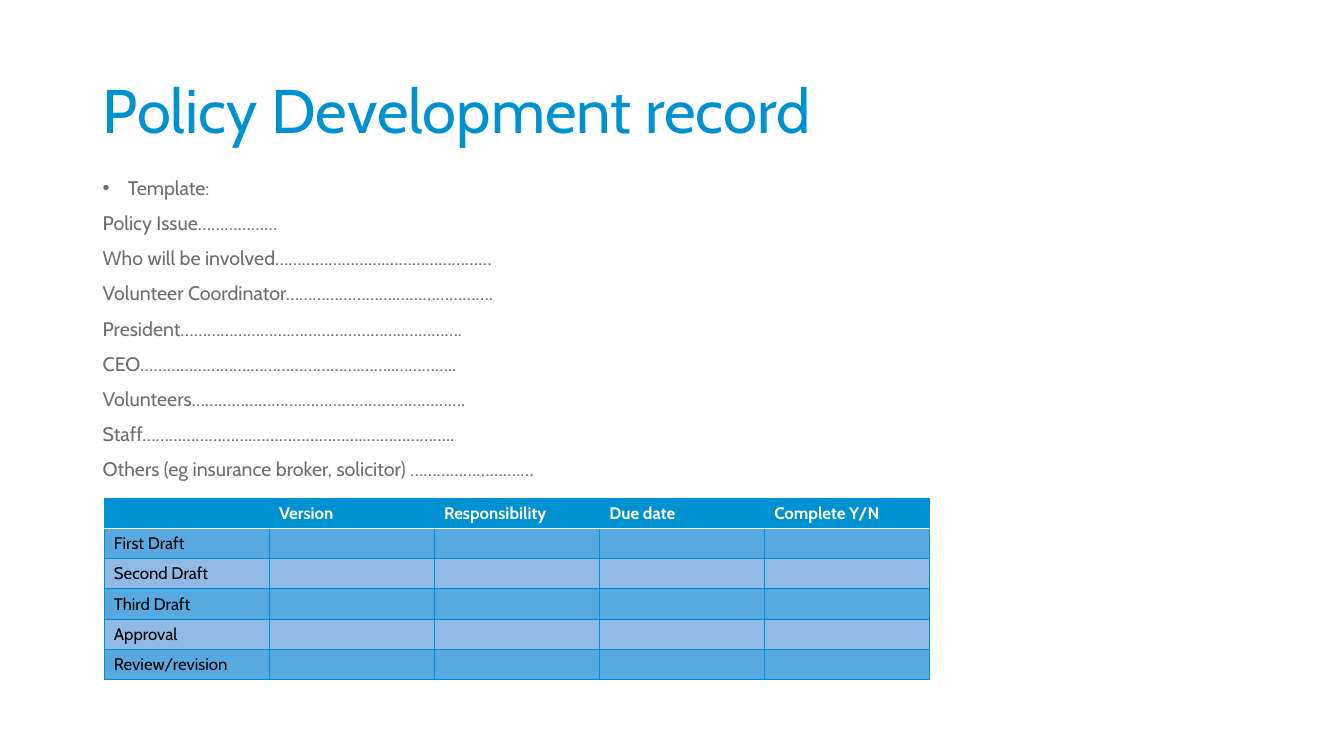
from lxml import etree
from pptx import Presentation
from pptx import util as u
from pptx.dml.color import RGBColor
from pptx.enum import text
from pptx.oxml.ns import qn

FONT = "Cabin"
BLUE, GREY, WHITE, BLACK = "0091D2", "6E6E6E", "FFFFFF", "000000"
BANDS = ["57A9DF", "90BAE6"]

FORM_LINES = [
    "Template:",
    "Policy Issue………………",
    "Who will be involved…………………….……………………",
    "Volunteer Coordinator…………………….………………….",
    "President…………………….……………………..………….",
    "CEO…………………….…………………….……..…………..",
    "Volunteers…………………….……………………………….",
    "Staff…………………….……………………..………………..",
    "Others (eg insurance broker, solicitor) …………………….…",
]
HEADINGS = ["", "Version", "Responsibility", "Due date", "Complete Y/N"]
STAGES = ["First Draft", "Second Draft", "Third Draft", "Approval", "Review/revision"]


def color(hex_value):
    return RGBColor.from_string(hex_value)


def set_font(paragraph, size, hex_value, bold=False):
    font = paragraph.font
    font.name, font.size, font.bold = FONT, u.Pt(size), bold
    font.color.rgb = color(hex_value)


def add_bullet(paragraph):
    properties = paragraph._p.get_or_add_pPr()
    properties.set("marL", str(u.Inches(0.25)))
    properties.set("indent", str(u.Inches(-0.25)))
    etree.SubElement(properties, qn("a:buFont")).set("typeface", "Arial")
    etree.SubElement(properties, qn("a:buChar")).set("char", "•")


def add_text(slide, lines, top, height, size, hex_value, anchor, bullets=0):
    """Add one paragraph per line; the first `bullets` of them are bulleted."""
    box = slide.shapes.add_textbox(
        u.Inches(0.92), u.Inches(top), u.Inches(11.5), u.Inches(height))
    frame = box.text_frame
    frame.word_wrap = True
    frame.vertical_anchor = anchor
    for index, line in enumerate(lines):
        paragraph = frame.add_paragraph() if index else frame.paragraphs[0]
        paragraph.text = line
        paragraph.line_spacing = 0.9
        if index:
            paragraph.space_before = u.Pt(10)
        if index < bullets:
            add_bullet(paragraph)
        set_font(paragraph, size, hex_value)


def add_border(cell, side, hex_value, width):
    line = etree.SubElement(cell._tc.get_or_add_tcPr(), qn(f"a:ln{side}"))
    line.set("w", str(u.Pt(width)))
    fill = etree.SubElement(line, qn("a:solidFill"))
    etree.SubElement(fill, qn("a:srgbClr")).set("val", hex_value)


def fill_cell(cell, label, row):
    is_header = row == 0
    below_header = {"B": 0, "T": 1}
    for side in "LRTB":
        if below_header.get(side) == row:
            add_border(cell, side, WHITE, 1)
        else:
            add_border(cell, side, BLUE, 0.5)
    cell.fill.solid()
    cell.fill.fore_color.rgb = color(BLUE if is_header else BANDS[(row - 1) % 2])
    cell.text = label
    paragraph = cell.text_frame.paragraphs[0]
    set_font(paragraph, 12, WHITE if is_header else BLACK, is_header)
    if not label:  # keeps an empty cell from stretching its row
        etree.SubElement(paragraph._p, qn("a:endParaRPr")).set("sz", "1200")


def add_schedule(slide):
    rows = [HEADINGS] + [[stage] + [""] * (len(HEADINGS) - 1) for stage in STAGES]
    row_height = u.Inches(0.3)
    schedule = slide.shapes.add_table(
        len(rows), len(HEADINGS), u.Inches(1.03), u.Inches(4.94),
        u.Inches(8.19), row_height * len(rows)).table
    for row, labels in enumerate(rows):
        schedule.rows[row].height = row_height
        for column, label in enumerate(labels):
            fill_cell(schedule.cell(row, column), label, row)


def main():
    deck = Presentation()
    deck.slide_width, deck.slide_height = u.Inches(13.33), u.Inches(7.5)
    slide = deck.slides.add_slide(deck.slide_layouts[6])
    add_text(slide, ["Policy Development record"], 0.4, 1.45, 44, BLUE,
             text.MSO_ANCHOR.MIDDLE)
    add_text(slide, FORM_LINES, 1.72, 4.33, 14, GREY, text.MSO_ANCHOR.TOP, bullets=1)
    add_schedule(slide)
    deck.save("out.pptx")


if __name__ == "__main__":
    main()
